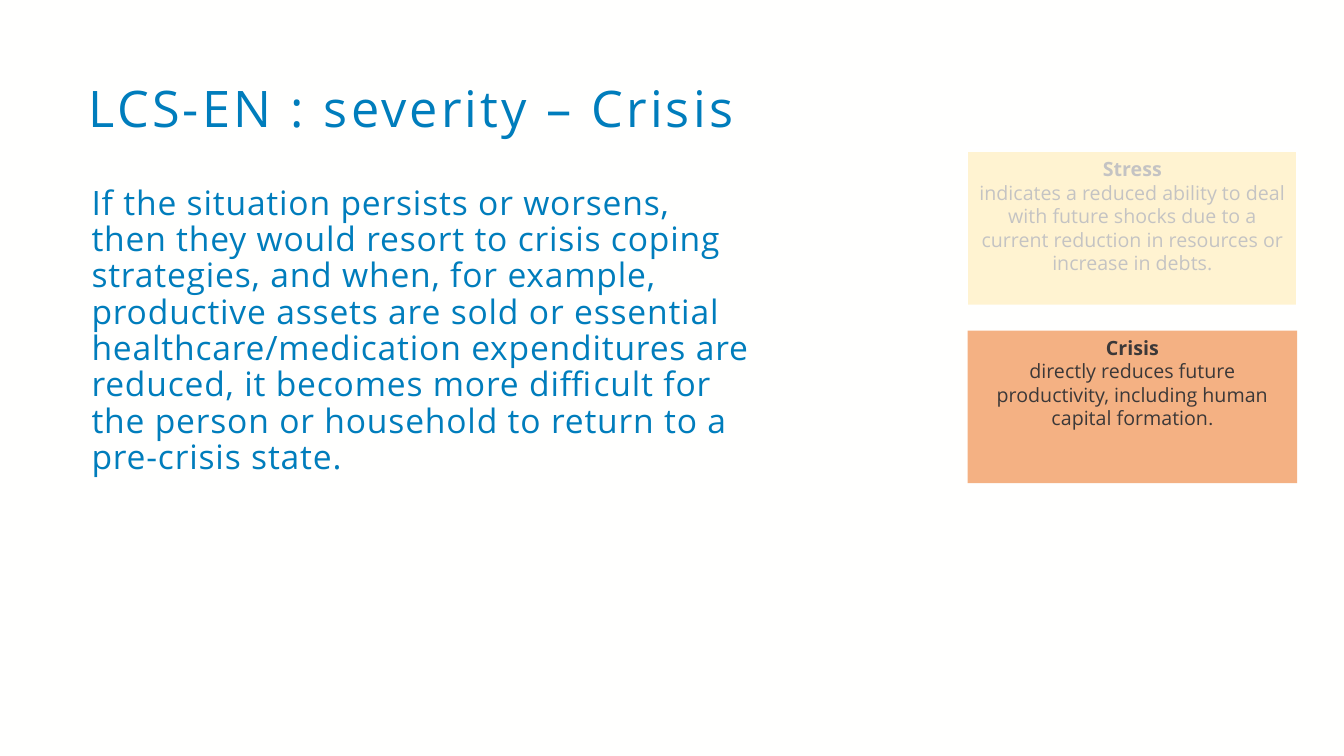
import pptx
import pptx.util
import pptx.dml.color
import pptx.enum.shapes
import pptx.enum.text
import pptx.oxml

Pt = pptx.util.Pt
RGB = pptx.dml.color.RGBColor
Align = pptx.enum.text.PP_ALIGN
Anchor = pptx.enum.text.MSO_ANCHOR

BLUE = RGB(0x00, 0x7D, 0xBC)
DARK = RGB(0x3B, 0x38, 0x38)
GOLD = RGB(0xFF, 0xD9, 0x66)
ORANGE = RGB(0xF4, 0xB1, 0x83)
WHITE = RGB(0xFF, 0xFF, 0xFF)
PAPER = RGB(0xFF, 0xFF, 0xFE)


class Page:
    """Holds the style and the current slide."""
    font = "Open Sans"

    def __init__(self, deck):
        self.slide = deck.slides.add_slide(deck.slide_layouts[5])
        back = self.slide.background.fill
        back.solid()
        back.fore_color.rgb = PAPER

    def run(self, para, text, size, color, bold=False, space=0, font=None):
        run = para.add_run()
        run.text = text
        run.font.name = font or self.font
        run.font.size = Pt(size)
        run.font.bold = bold
        run.font.color.rgb = color
        if space:
            run.font._element.set("spc", str(round(space * 100)))

    def prose(self, shape, box, text, size, space):
        shape.left, shape.top, shape.width, shape.height = map(Pt, box)
        frame = shape.text_frame
        frame.word_wrap = True
        frame.auto_size = pptx.enum.text.MSO_AUTO_SIZE.NONE
        frame.vertical_anchor = Anchor.TOP
        para = frame.paragraphs[0]
        para.alignment = Align.LEFT
        para.line_spacing = 0.9
        self.run(para, text, size, BLUE, space=space)

    def title(self, box, text):
        self.prose(self.slide.shapes.title, box, text, 36, 2.3)

    def text(self, box, text):
        shape = self.slide.shapes.add_textbox(*map(Pt, box))
        self.prose(shape, box, text, 24, 0.6)

    def rect(self, box, color):
        kind = pptx.enum.shapes.MSO_SHAPE.RECTANGLE
        shape = self.slide.shapes.add_shape(kind, *map(Pt, box))
        shape.shadow.inherit = False
        shape.fill.solid()
        shape.fill.fore_color.rgb = color
        shape.line.fill.background()
        return shape

    def card(self, box, color, head, parts):
        frame = self.rect(box, color).text_frame
        frame.word_wrap = True
        frame.vertical_anchor = Anchor.TOP
        top, body = frame.paragraphs[0], frame.add_paragraph()
        top.alignment = body.alignment = Align.CENTER
        self.run(top, head, 14, DARK, bold=True)
        for text, font in parts:
            self.run(body, text, 14, DARK, font=font)

    def veil(self, box, color, alpha):
        shape = self.rect(box, color)
        shape.line.color.rgb = color
        shape.line.width = Pt(1)
        tint = shape.fill._xPr.find(".//" + pptx.oxml.ns.qn("a:srgbClr"))
        node = pptx.oxml.parse_xml(
            f'<a:alpha {pptx.oxml.ns.nsdecls("a")} val="{alpha * 1000}"/>')
        tint.append(node)


def main():
    deck = pptx.Presentation()
    deck.slide_width, deck.slide_height = Pt(960), Pt(540)
    page = Page(deck)

    # Title and main text
    page.title((56.2, 56.2, 870.5, 51.8), "LCS-EN : severity – Crisis")
    page.text((58.3, 129.6, 484.6, 307.4),
              "If the situation persists or worsens, then they would resort to "
              "crisis coping strategies, and when, for example, productive "
              "assets are sold or essential healthcare/medication expenditures "
              "are reduced, it becomes more difficult for the person or "
              "household to return to a pre-crisis state.")

    # Severity cards
    left, wide, high = 691.2, 235.4, 109
    page.card((left, 108.7, wide, high), GOLD, "Stress", [
        ("indicates a reduced ability to deal with future shocks due to a "
         "current reduction in resources or increase in debts.", None)])
    page.card((left, 236.2, wide, high), ORANGE, "Crisis", [
        ("directly reduces future productivity, including human capital "
         "formation", None),
        (".", "Calibri")])

    # Veil that fades the first card
    page.veil((left, 105.8, wide, 113), WHITE, 70)

    deck.save("out.pptx")


if __name__ == "__main__":
    main()
